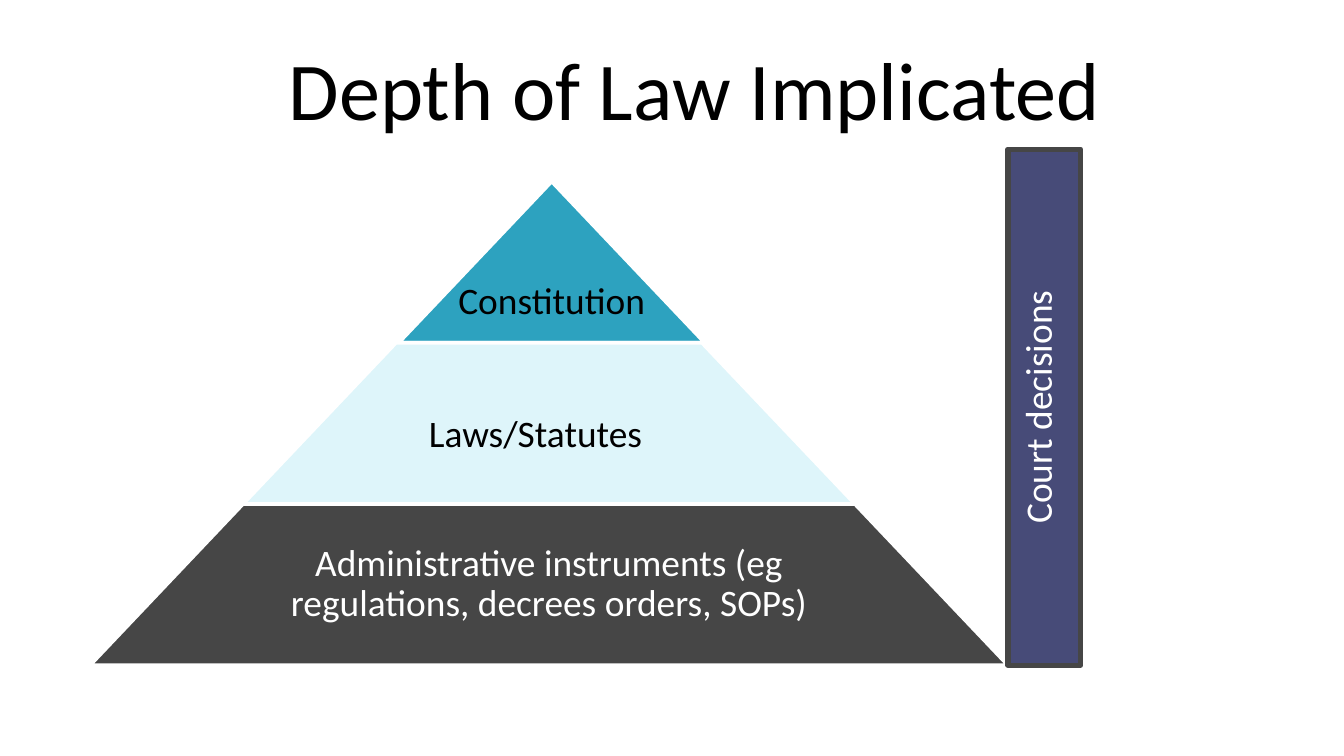
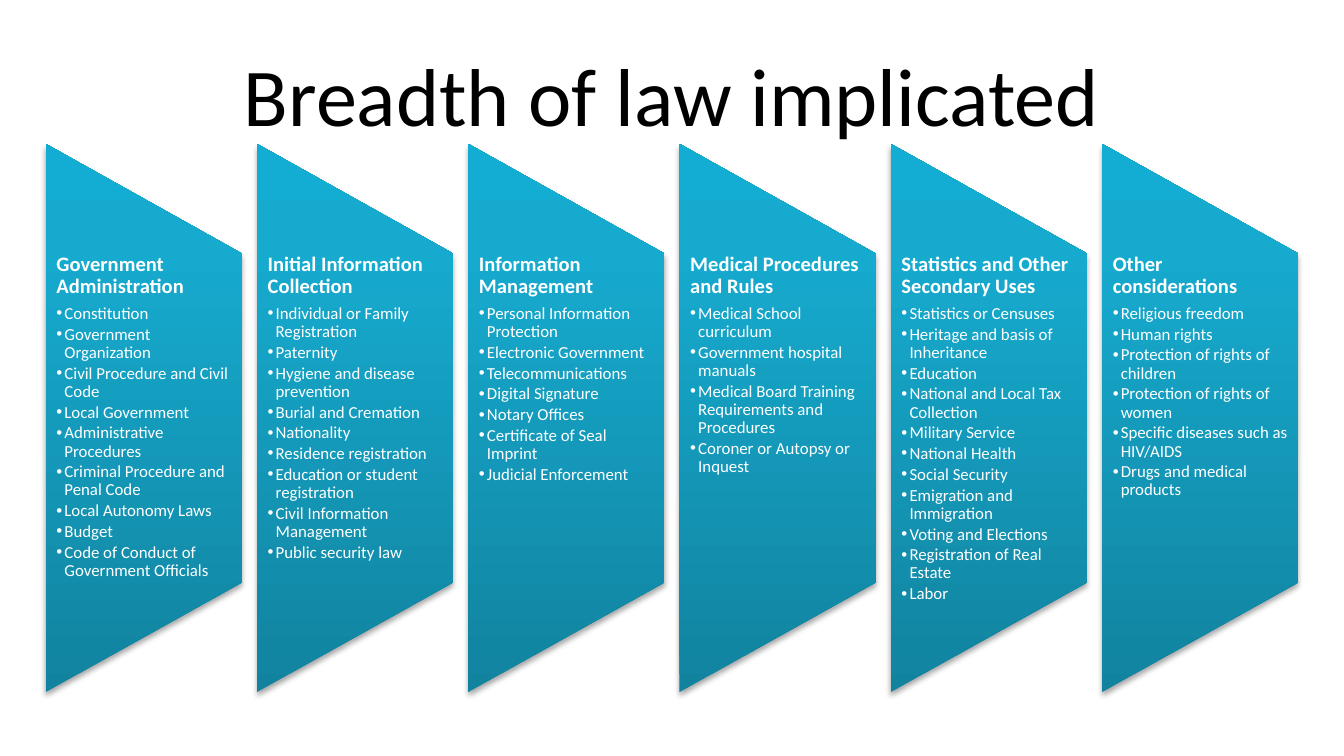
from lxml import etree
from pptx import Presentation
from pptx.dml.color import RGBColor
from pptx.enum.shapes import MSO_SHAPE
from pptx.enum.text import MSO_ANCHOR, PP_ALIGN
from pptx.oxml import parse_xml
from pptx.oxml.ns import nsdecls, qn
from pptx.util import Inches, Pt

TRAPEZOID = MSO_SHAPE.TRAPEZOID
RECTANGLE = MSO_SHAPE.RECTANGLE
BANNER = MSO_SHAPE.FLOWCHART_MANUAL_OPERATION
TOP, MIDDLE = MSO_ANCHOR.TOP, MSO_ANCHOR.MIDDLE
LEFT, CENTER = PP_ALIGN.LEFT, PP_ALIGN.CENTER

FONT = "Calibri"
BULLET_FONT = "Arial"
BLACK = RGBColor(0x00, 0x00, 0x00)
WHITE = RGBColor(0xFF, 0xFF, 0xFF)
TEAL = RGBColor(0x2D, 0xA2, 0xBF)
PALE = RGBColor(0xDE, 0xF5, 0xFA)
GRAY = RGBColor(0x46, 0x46, 0x46)
INDIGO = RGBColor(0x47, 0x4B, 0x78)
BANNER_STOPS = [
    (0, RGBColor(0x11, 0x83, 0x9F)),
    (80, RGBColor(0x16, 0xAA, 0xCE)),
    (100, RGBColor(0x13, 0xAD, 0xD3)),
]

# Label, fill, text colour, tier shift, text width, text offset (x, y) in the tier
TIERS = [
    ("Constitution", TEAL, BLACK, 0.02, 2.28, 0, 0.3),
    ("Laws/Statutes", PALE, BLACK, 0, 2.96, -0.1, 0.09),
    ("Administrative instruments (eg regulations, decrees orders, SOPs)",
     GRAY, WHITE, 0, 4.44, 0, 0),
]

AREAS = [
    ("Government Administration", [
        "Constitution", "Government Organization",
        "Civil Procedure and Civil Code", "Local Government",
        "Administrative Procedures", "Criminal Procedure and Penal Code",
        "Local Autonomy Laws", "Budget",
        "Code of Conduct of Government Officials"]),
    ("Initial Information Collection", [
        "Individual or Family Registration", "Paternity",
        "Hygiene and disease prevention", "Burial and Cremation",
        "Nationality", "Residence registration",
        "Education or student registration", "Civil Information Management",
        "Public security law"]),
    ("Information Management", [
        "Personal Information Protection", "Electronic Government",
        "Telecommunications", "Digital Signature", "Notary Offices",
        "Certificate of Seal Imprint", "Judicial Enforcement"]),
    ("Medical Procedures and Rules", [
        "Medical School curriculum", "Government hospital manuals",
        "Medical Board Training Requirements and Procedures",
        "Coroner or Autopsy or Inquest"]),
    ("Statistics and Other Secondary Uses", [
        "Statistics or Censuses", "Heritage and basis of Inheritance",
        "Education", "National and Local Tax Collection",
        "Military Service", "National Health", "Social Security",
        "Emigration and Immigration", "Voting and Elections",
        "Registration of Real Estate", "Labor"]),
    ("Other considerations", [
        "Religious freedom", "Human rights",
        "Protection of rights of children", "Protection of rights of women",
        "Specific diseases such as HIV/AIDS", "Drugs and medical products"]),
]


# Shared helpers
def add_text(tf, text, size=20, color=BLACK, bold=False, align=CENTER,
             spacing=None, after=0, bullet=False):
    """Write one paragraph, reusing the frame's first one while it is empty."""
    p = tf.paragraphs[0]
    if p.runs:
        p = tf.add_paragraph()
    p.alignment = align
    if spacing:
        p.line_spacing = spacing
    p.space_after = Pt(after)
    if bullet:
        p.level = 1
        pPr = p._p.get_or_add_pPr()
        pPr.set("marL", str(Inches(0.06)))
        pPr.set("indent", str(-Inches(0.06)))
        etree.SubElement(pPr, qn("a:buFont")).set("typeface", BULLET_FONT)
        etree.SubElement(pPr, qn("a:buChar")).set("char", "•")
    r = p.add_run()
    r.text = text
    r.font.name = FONT
    r.font.size = Pt(size)
    r.font.bold = bold
    r.font.color.rgb = color


def add_box(slide, x, y, w, h, anchor=TOP, inset_x=0.03, inset_y=0.03):
    sp = slide.shapes.add_textbox(Inches(x), Inches(y), Inches(w), Inches(h))
    tf = sp.text_frame
    tf.word_wrap = True
    tf.vertical_anchor = anchor
    tf.margin_left = tf.margin_right = Inches(inset_x)
    tf.margin_top = tf.margin_bottom = Inches(inset_y)
    return tf


def add_shape(slide, kind, x, y, w, h, fill=None, line=None, width=0):
    sp = slide.shapes.add_shape(kind, Inches(x), Inches(y), Inches(w), Inches(h))
    sp.shadow.inherit = False
    if fill is not None:
        sp.fill.solid()
        sp.fill.fore_color.rgb = fill
    if line is None:
        sp.line.fill.background()
    else:
        sp.line.color.rgb = line
        sp.line.width = Pt(width)
    return sp


def add_titled_slide(prs, text, x, y):
    slide = prs.slides.add_slide(prs.slide_layouts[5])
    title = slide.shapes.title
    title.left, title.top = Inches(x), Inches(y)
    title.width, title.height = Inches(9), Inches(0.94)
    title.text_frame.vertical_anchor = MIDDLE
    add_text(title.text_frame, text, size=44)
    return slide


# Depth slide
def add_pyramid(slide, x, y, w, h):
    count = len(TIERS)
    tier_h = h / count
    for i, (label, fill, color, shift, text_w, dx, dy) in enumerate(TIERS):
        tier_w = w * (i + 1) / count
        center = x + w / 2 + shift
        top = y + i * tier_h
        sp = add_shape(slide, TRAPEZOID, center - tier_w / 2, top,
                       tier_w, tier_h, fill, WHITE, 2)
        sp.adjustments[0] = w / 2 / h
        tf = add_box(slide, center - text_w / 2 + dx, top + dy,
                     text_w, tier_h, MIDDLE)
        add_text(tf, label, color=color, spacing=0.9)


def add_court_bar(slide, x, y, w, h):
    sp = add_shape(slide, RECTANGLE, x, y, w, h, INDIGO, GRAY, 2.75)
    etree.SubElement(sp.line._get_or_add_ln(), qn("a:round"))
    tf = sp.text_frame
    tf.word_wrap = True
    tf.vertical_anchor = TOP
    tf._txBody.bodyPr.set("vert", "vert270")
    add_text(tf, "Court decisions", color=WHITE)


# Breadth slide
def style_banner(sp):
    """Upright gradient and soft shadow, both independent of the rotation."""
    stops = "".join(
        f'<a:gs pos="{pos * 1000}"><a:srgbClr val="{color}"/></a:gs>'
        for pos, color in BANNER_STOPS)
    spPr = sp._element.spPr
    spPr.find(qn("a:prstGeom")).addnext(parse_xml(
        f'<a:gradFill {nsdecls("a")} rotWithShape="0"><a:gsLst>{stops}</a:gsLst>'
        '<a:lin ang="16200000" scaled="0"/></a:gradFill>'))
    spPr.find(qn("a:effectLst")).append(parse_xml(
        f'<a:outerShdw {nsdecls("a")} blurRad="{Pt(3.1)}" dist="{Pt(1.8)}" '
        'dir="5400000" rotWithShape="0"><a:srgbClr val="000000">'
        '<a:alpha val="35000"/></a:srgbClr></a:outerShdw>'))


def add_area(slide, heading, items, x, y, w, h):
    # The banner lies on its side, so its width and height are swapped
    sp = add_shape(slide, BANNER, x + (w - h) / 2, y + (h - w) / 2, h, w)
    sp.rotation = 270
    style_banner(sp)
    tf = add_box(slide, x, y + h / 5, w, h * 3 / 5, inset_x=0.08, inset_y=0)
    add_text(tf, heading, size=11, color=WHITE, bold=True, align=LEFT,
             spacing=0.9, after=3.85)
    for item in items:
        add_text(tf, item, size=9, color=WHITE, align=LEFT,
                 spacing=0.9, after=1.35, bullet=True)


def add_areas(slide, x, y, w, h, area_w=1.46):
    pitch = (w - area_w) / (len(AREAS) - 1)
    for i, (heading, items) in enumerate(AREAS):
        add_area(slide, heading, items, x + i * pitch, y, area_w, h)


def main():
    prs = Presentation()
    prs.slide_width = Inches(10)
    prs.slide_height = prs.slide_width * 9 // 16

    depth = add_titled_slide(prs, "Depth of Law Implicated", 0.67, 0.18)
    add_pyramid(depth, 0.67, 1.35, 6.83, 3.6)
    add_court_bar(depth, 7.5, 1.11, 0.54, 3.84)

    breadth = add_titled_slide(prs, "Breadth of law implicated", 0.5, 0.23)
    add_areas(breadth, 0.34, 1.07, 9.32, 4.08)

    prs.save("out.pptx")


if __name__ == "__main__":
    main()
